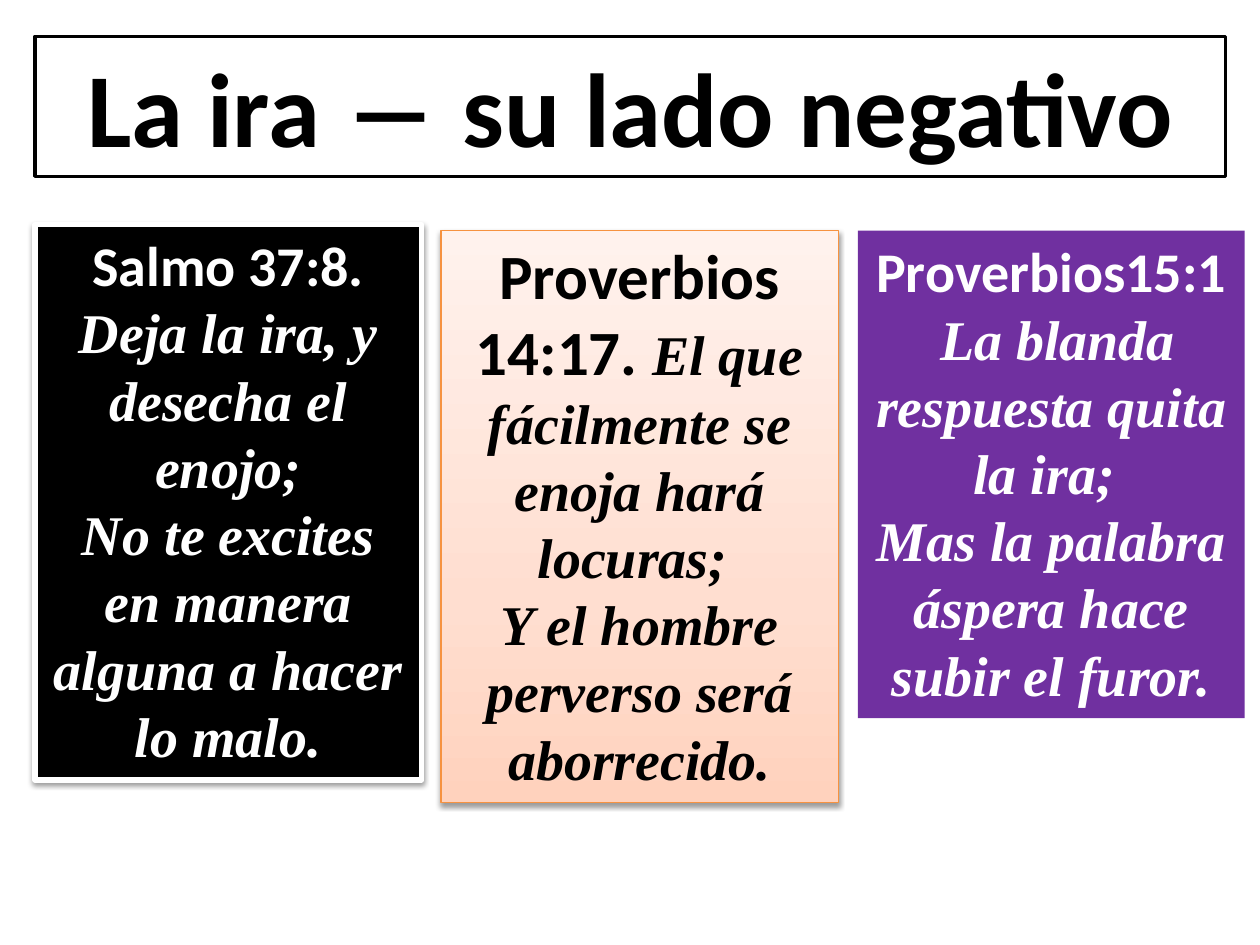
import copy
from dataclasses import dataclass

import lxml.etree
import pptx
import pptx.dml.color
import pptx.enum.shapes
import pptx.enum.text
import pptx.oxml.ns
import pptx.util

Pt = pptx.util.Pt
RGB = pptx.dml.color.RGBColor.from_string
qn = pptx.oxml.ns.qn


@dataclass(frozen=True)
class Theme:
    black: str = "000000"
    white: str = "FFFFFF"
    purple: str = "7030A0"
    orange: str = "F69240"
    peach: tuple = ((0, "FFD2BD"), (0.35, "FFDED0"), (1, "FFF2ED"))
    heading: str = "Calibri"
    verse: str = "Times New Roman"
    title_size: int = 60
    large: int = 36
    body: int = 32


T = Theme()


def add_panel(s, box, fill, line, width, paragraphs):
    """Add a bordered rectangle; each run is (text, font, size, colour)."""
    sp = s.shapes.add_shape(pptx.enum.shapes.MSO_SHAPE.RECTANGLE, *map(Pt, box))
    sp.shadow.inherit = False
    if isinstance(fill, tuple):
        sp.fill.gradient()
        sp.fill.gradient_angle = 90
        stops = sp._element.spPr.find(".//" + qn("a:gsLst"))
        stops.insert(1, copy.deepcopy(stops[0]))
        for stop, (position, color) in zip(sp.fill.gradient_stops, fill):
            stop.position = position
            stop.color.rgb = RGB(color)
    else:
        sp.fill.solid()
        sp.fill.fore_color.rgb = RGB(fill)
    if line:
        sp.line.color.rgb = RGB(line)
        sp.line.width = Pt(width)
    else:
        sp.line.fill.background()

    tf = sp.text_frame
    tf.word_wrap = True
    tf.auto_size = pptx.enum.text.MSO_AUTO_SIZE.SHAPE_TO_FIT_TEXT
    tf.vertical_anchor = pptx.enum.text.MSO_ANCHOR.TOP
    for i, runs in enumerate(paragraphs):
        p = tf.add_paragraph() if i else tf.paragraphs[0]
        p.alignment = pptx.enum.text.PP_ALIGN.CENTER
        for text, font, size, color in runs:
            r = p.add_run()
            r.text = text
            r.font.name = font
            r.font.size = Pt(size)
            r.font.bold = True
            r.font.italic = font == T.verse
            r.font.color.rgb = RGB(color)
    return sp


def add_shadow(sp):
    effects = sp._element.spPr.find(qn("a:effectLst"))
    shadow = lxml.etree.SubElement(
        effects, qn("a:outerShdw"), blurRad=str(Pt(3.1)), dist=str(Pt(1.6)),
        dir="5400000", rotWithShape="0")
    color = lxml.etree.SubElement(shadow, qn("a:srgbClr"), val=T.black)
    lxml.etree.SubElement(color, qn("a:alpha"), val="38000")


prs = pptx.Presentation()
prs.slide_width, prs.slide_height = Pt(720), Pt(540)
s = prs.slides.add_slide(prs.slide_layouts[6])

add_panel(s, (20, 20.8, 680.4, 80), T.white, T.black, 2, [
    [("La ira ― su lado negativo", T.heading, T.title_size, T.black)],
])

salmo = add_panel(s, (20, 128.3, 221, 317.5), T.black, T.white, 3, [
    [("Salmo 37:8. ", T.heading, T.body, T.white),
     ("Deja la ira, y desecha el enojo;", T.verse, T.body, T.white)],
    [("No te excites en manera alguna a hacer lo malo.",
      T.verse, T.body, T.white)],
])

locuras = add_panel(s, (252, 131.8, 227, 327), T.peach, T.orange, 0.75, [
    [("Proverbios 14:17. ", T.heading, T.large, T.black),
     ("El que fácilmente se enoja hará locuras; ",
      T.verse, T.body, T.black)],
    [("Y el hombre perverso será aborrecido.", T.verse, T.body, T.black)],
])

add_panel(s, (490.3, 131.8, 221, 278.6), T.purple, None, 0, [
    [("Proverbios15:1", T.heading, T.body, T.white)],
    [(" ", T.heading, T.body, T.black),
     ("La blanda respuesta quita la ira; ", T.verse, T.body, T.white)],
    [("Mas la palabra áspera hace subir el furor.",
      T.verse, T.body, T.white)],
])

for sp in (salmo, locuras):
    add_shadow(sp)

prs.save("out.pptx")
